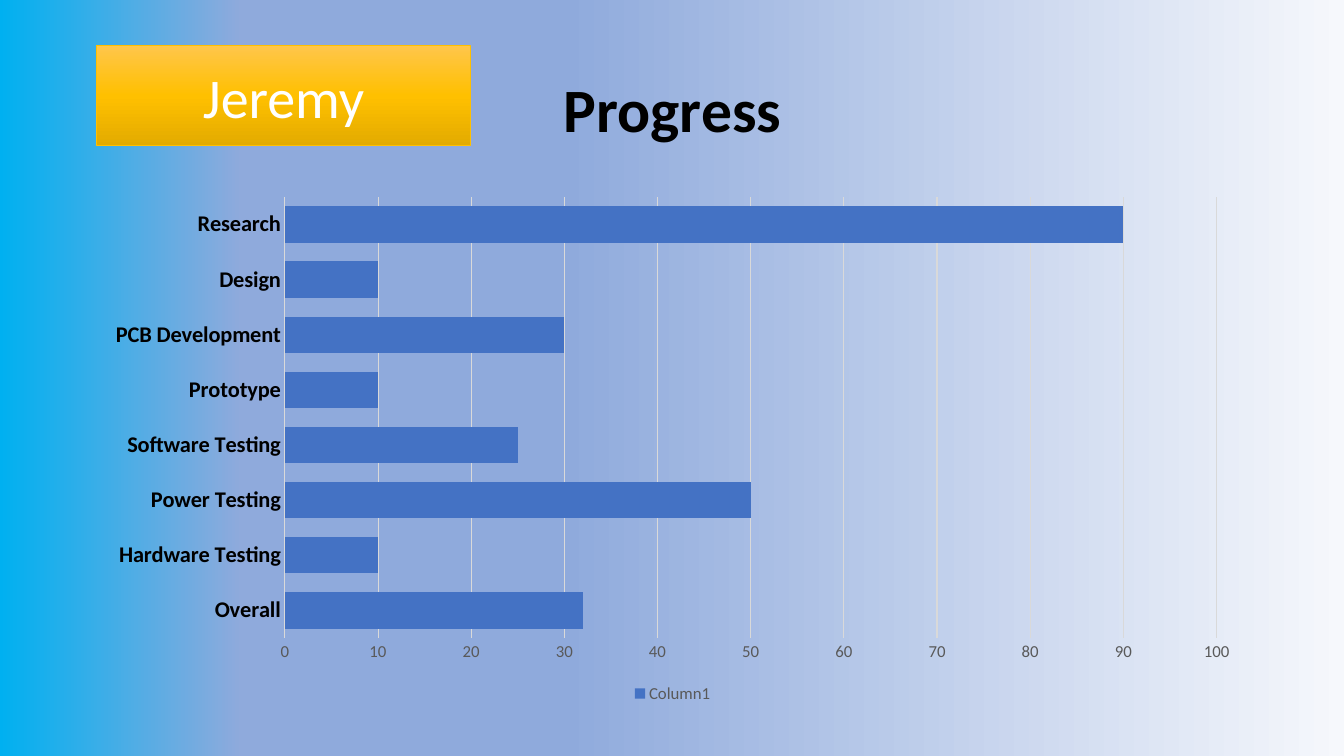
"""Build a progress slide with a name tag and a bar chart of task completion."""
from lxml import etree
from pptx import Presentation
from pptx import util as u
from pptx.chart.data import CategoryChartData
from pptx.dml.color import RGBColor
from pptx.enum import chart as ch
from pptx.enum import shapes, text
from pptx.oxml.ns import qn

WIDTH, HEIGHT = u.Inches(13.33), u.Inches(7.5)
FONT = "Calibri"
BLACK = RGBColor(0x00, 0x00, 0x00)
WHITE = RGBColor(0xFF, 0xFF, 0xFF)
GRAY = RGBColor(0x59, 0x59, 0x59)
GRID = RGBColor(0xD9, 0xD9, 0xD9)
BLUE = RGBColor(0x44, 0x72, 0xC4)
GOLD = RGBColor(0xFF, 0xC0, 0x00)
MIST = RGBColor(0xF6, 0xF8, 0xFC)
PERIWINKLE = RGBColor(0x8F, 0xAA, 0xDC)
SKY = RGBColor(0x00, 0xB0, 0xF0)
LIGHT_GOLD = RGBColor(0xFF, 0xC6, 0x4B)
DARK_GOLD = RGBColor(0xE3, 0xAB, 0x00)

PROGRESS = {
    "Overall": 32,
    "Hardware Testing": 10,
    "Power Testing": 50,
    "Software Testing": 25,
    "Prototype": 10,
    "PCB Development": 30,
    "Design": 10,
    "Research": 90,
}


def box(left, top, width, height):
    """Turn shares of the slide's size into a position and size."""
    return [int(share * side) for share, side in
            zip((left, top, width, height), (WIDTH, HEIGHT) * 2)]


def style(font, size, color, bold=False):
    """Format a font."""
    font.name, font.size, font.bold = FONT, u.Pt(size), bold
    font.color.rgb = color


def paint_gradient(fill, owner, stops, angle):
    """Fill the owner with a linear gradient of (percent, color) stops."""
    fill.gradient()
    gradient = next(owner.element.iter(qn("a:gradFill")))
    stop_list = gradient.find(qn("a:gsLst"))
    for stop in list(stop_list):
        stop_list.remove(stop)
    for percent, color in stops:
        stop = etree.SubElement(stop_list, qn("a:gs"), pos=str(percent * 1000))
        etree.SubElement(stop, qn("a:srgbClr"), val=str(color))
    gradient.find(qn("a:lin")).set("ang", str(angle * 60000))


def write_centered(frame, words, size, color, bold=False):
    """Write one centred line in the middle of a text frame."""
    frame.text = words
    frame.word_wrap = True
    frame.vertical_anchor = text.MSO_ANCHOR.MIDDLE
    line = frame.paragraphs[0]
    line.alignment = text.PP_ALIGN.CENTER
    style(line.runs[0].font, size, color, bold)


def add_title(slide, words):
    """Place and format the slide title."""
    title = slide.shapes.title
    title.left, title.top, title.width, title.height = box(0.069, 0.053, 0.863, 0.193)
    write_centered(title.text_frame, words, 44, BLACK, bold=True)
    title.text_frame.paragraphs[0].line_spacing = 0.9


def add_name_tag(slide, name):
    """Add the golden name tag."""
    tag = slide.shapes.add_shape(shapes.MSO_SHAPE.RECTANGLE,
                                 *box(0.072, 0.06, 0.278, 0.133))
    tag.shadow.inherit = False
    paint_gradient(tag.fill, tag,
                   [(0, LIGHT_GOLD), (50, GOLD), (100, DARK_GOLD)], 90)
    tag.line.color.rgb = GOLD
    tag.line.width = u.Pt(0.5)
    write_centered(tag.text_frame, name, 40, WHITE)


def draw_line(line):
    """Give an axis or grid line its thin grey stroke."""
    line.color.rgb = GRID
    line.width = u.Pt(0.75)


def add_progress_chart(slide):
    """Add the bar chart of progress by task."""
    data = CategoryChartData()
    data.categories = PROGRESS.keys()
    data.add_series("Column1", PROGRESS.values())
    chart = slide.shapes.add_chart(ch.XL_CHART_TYPE.BAR_CLUSTERED,
                                   *box(0.069, 0.247, 0.863, 0.689), data).chart
    chart.has_title = False
    style(chart.font, 10, BLACK)

    tasks, percent = chart.category_axis, chart.value_axis
    for axis in (tasks, percent):
        axis.major_tick_mark = axis.minor_tick_mark = ch.XL_TICK_MARK.NONE
    style(tasks.tick_labels.font, 16, BLACK, bold=True)
    draw_line(tasks.format.line)
    style(percent.tick_labels.font, 12, GRAY)
    percent.format.line.fill.background()
    percent.minimum_scale, percent.maximum_scale = 0, 100
    percent.major_unit = 10
    draw_line(percent.major_gridlines.format.line)

    chart.has_legend = True
    chart.legend.position = ch.XL_LEGEND_POSITION.BOTTOM
    chart.legend.include_in_layout = False
    style(chart.legend.font, 12, GRAY)

    bars = chart.plots[0]
    bars.gap_width = 51
    bars.vary_by_categories = False
    bars.series[0].format.fill.solid()
    bars.series[0].format.fill.fore_color.rgb = BLUE


def main():
    """Build and save the presentation."""
    deck = Presentation()
    deck.slide_width, deck.slide_height = WIDTH, HEIGHT
    slide = deck.slides.add_slide(deck.slide_layouts[5])
    paint_gradient(slide.background.fill, slide,
                   [(0, MIST), (58, PERIWINKLE), (82, PERIWINKLE), (100, SKY)], 180)
    add_title(slide, "Progress")
    add_progress_chart(slide)
    add_name_tag(slide, "Jeremy")
    deck.save("out.pptx")


if __name__ == "__main__":
    main()
